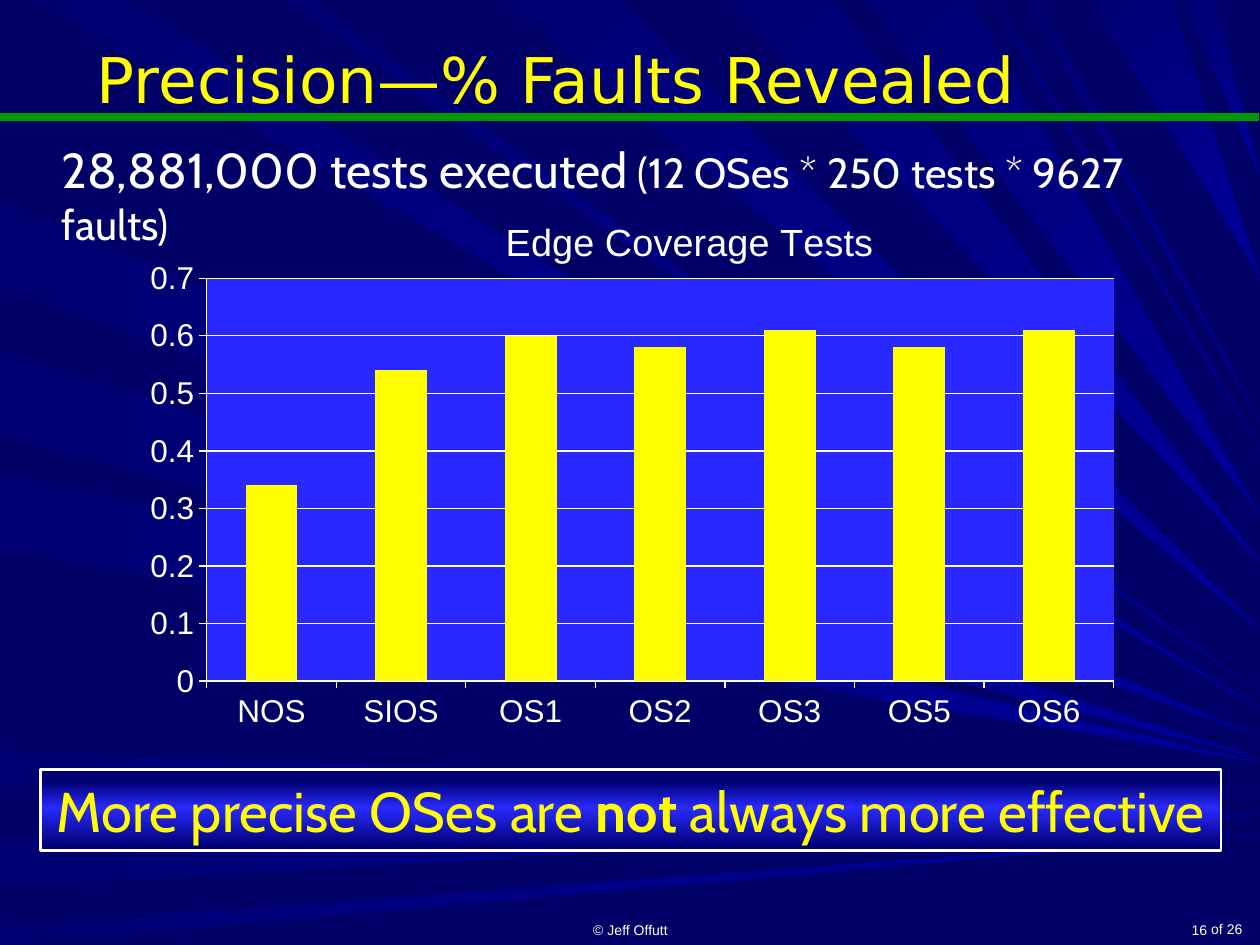
from copy import deepcopy

from lxml import etree
from pptx import Presentation
from pptx.chart.data import CategoryChartData
from pptx.dml.color import RGBColor
from pptx.enum.chart import XL_CHART_TYPE, XL_TICK_MARK
from pptx.enum.shapes import MSO_CONNECTOR, MSO_SHAPE
from pptx.enum.text import MSO_ANCHOR, MSO_AUTO_SIZE, PP_ALIGN
from pptx.oxml import parse_xml
from pptx.oxml.ns import nsdecls, qn
from pptx.util import Inches, Pt

LEFT, CENTER, RIGHT = PP_ALIGN.LEFT, PP_ALIGN.CENTER, PP_ALIGN.RIGHT
TOP, MIDDLE, BOTTOM = MSO_ANCHOR.TOP, MSO_ANCHOR.MIDDLE, MSO_ANCHOR.BOTTOM
COLUMN, OUTSIDE = XL_CHART_TYPE.COLUMN_CLUSTERED, XL_TICK_MARK.OUTSIDE
STRAIGHT, RECTANGLE, FIXED = MSO_CONNECTOR.STRAIGHT, MSO_SHAPE.RECTANGLE, MSO_AUTO_SIZE.NONE

THEME = {
    "night": "000066", "rule": "009900", "text": "FFFFFF", "accent": "FFFF00",
    "panel": "2929FF", "edge": "000073", "ray_start": "000073", "ray_end": "000099",
    "heading": "DejaVu Sans", "body": "Cabin", "plain": "Arial",
    "title": 36, "banner": 32, "lead": 28, "detail": 24,
    "chart_title": 21.6, "chart": 18, "footer": 8,
}


def paint(shape, stops, angle):
    shape.fill.gradient()
    stop_list = shape._element.spPr.find(qn("a:gradFill")).find(qn("a:gsLst"))
    while len(stop_list) < len(stops):
        stop_list.append(deepcopy(stop_list[0]))
    for stop, (percent, color) in zip(shape.fill.gradient_stops, stops):
        stop.position = percent / 100
        stop.color.rgb = RGBColor.from_string(THEME[color])
    shape.fill.gradient_angle = -angle % 360


def write(box, *spans, face="plain", color="text", align=LEFT, anchor=TOP, wrap=True):
    frame = box.text_frame
    frame.word_wrap = wrap
    frame.auto_size = FIXED
    frame.vertical_anchor = anchor
    para = frame.paragraphs[0]
    para.alignment = align
    for text, size, bold in spans:
        span = para.add_run()
        span.text = text
        span.font.size = Pt(THEME[size])
        span.font.bold = bold
        span.font.name = THEME[face]
        span.font.color.rgb = RGBColor.from_string(THEME[color])


deck = Presentation()
deck.slide_width, deck.slide_height = Inches(10), Inches(7.5)
unit = deck.slide_width // 1000
page = deck.slides.add_slide(deck.slide_layouts[5])
page.background.fill.solid()
page.background.fill.fore_color.rgb = RGBColor.from_string(THEME["night"])

left_rays = [(159, 228, 585), (278, 347, 602), (374, 437, 605),
             (596, 623, 632), (665, 704, 647), (735, 750, 662)]
top_rays = [(26, 101, 562), (225, 247, 550), (398, 492, 500), (577, 661, 446),
            (686, 770, 409), (785, 792, 357), (815, 824, 336), (865, 930, 220),
            (939, 964, 140)]
rays = [((0, near), (0, far), (1000, end), 0) for near, far, end in left_rays]
rays += [((near, 0), (far, 0), (1000, end), 45) for near, far, end in top_rays]
burst = page.shapes.add_group_shape()
for near, far, tip, angle in rays:
    builder = burst.shapes.build_freeform(*near, scale=unit)
    builder.add_line_segments([far, tip], close=True)
    ray = builder.convert_to_shape()
    ray.shadow.inherit = False
    ray.line.fill.background()
    paint(ray, [(0, "ray_start"), (100, "ray_end")], angle)

rule = page.shapes.add_connector(STRAIGHT, 0, 93 * unit, 999 * unit, 93 * unit)
rule.line.color.rgb = RGBColor.from_string(THEME["rule"])
rule.line.width = Pt(4.5)
etree.SubElement(rule._element.spPr, qn("a:effectLst"))

title = page.shapes.title
title._element.getparent().append(title._element)
title.left, title.top, title.width, title.height = 8 * unit, 0, 867 * unit, 125 * unit
write(title, ("Precision—% Faults Revealed", "title", False),
      face="heading", color="accent", align=CENTER, anchor=MIDDLE)

footers = [
    ("of 26", (950, 726, 46, 24), RIGHT, TOP),
    ("© Jeff Offutt", (342, 717, 317, 33), CENTER, BOTTOM),
    ("16", (787, 717, 181, 33), RIGHT, BOTTOM),
]
for text, area, align, anchor in footers:
    box = page.shapes.add_textbox(*[unit * length for length in area])
    write(box, (text, "footer", False), align=align, anchor=anchor)

data = CategoryChartData()
data.categories = ["NOS", "SIOS", "OS1", "OS2", "OS3", "OS5", "OS6"]
data.add_series("Series 1", [0.34, 0.54, 0.6, 0.58, 0.61, 0.58, 0.61])
chart = page.shapes.add_chart(
    COLUMN, 100 * unit, 141 * unit, 800 * unit, 444 * unit, data).chart
chart.has_legend = False
chart.font.name = THEME["plain"]
chart.font.size = Pt(THEME["chart"])
chart.font.color.rgb = RGBColor.from_string(THEME["text"])
chart.has_title = True
write(chart.chart_title, ("Edge Coverage Tests", "chart_title", False), align=CENTER)

columns = chart.plots[0]
columns.gap_width = 150
columns.vary_by_categories = False
columns.series[0].format.fill.solid()
columns.series[0].format.fill.fore_color.rgb = RGBColor.from_string(THEME["accent"])
values = chart.value_axis
values.minimum_scale, values.maximum_scale, values.major_unit = 0, 0.7, 0.1
values.has_major_gridlines = True
for axis in (chart.category_axis, values):
    axis.major_tick_mark = OUTSIDE
    axis.tick_labels.number_format = "General"
    axis.tick_labels.number_format_is_linked = False
for lines in (chart.category_axis, values, values.major_gridlines):
    lines.format.line.color.rgb = RGBColor.from_string(THEME["text"])
    lines.format.line.width = Pt(0.75)

plot_area = chart._chartSpace.chart.plotArea
plot_area.append(parse_xml(
    f'<c:spPr {nsdecls("c", "a")}><a:solidFill><a:srgbClr val="{THEME["panel"]}"/>'
    '</a:solidFill></c:spPr>'))
layouts = [
    (chart.chart_title._element, 1, {"xMode": "edge", "yMode": "edge", "x": 0.37, "y": 0.06}),
    (plot_area, 0, {"layoutTarget": "inner", "xMode": "edge", "yMode": "edge",
                    "x": 0.08, "y": 0.18, "w": 0.9, "h": 0.72}),
]
for part, position, settings in layouts:
    for old in part.findall(qn("c:layout")):
        part.remove(old)
    layout = etree.Element(qn("c:layout"))
    manual = etree.SubElement(layout, qn("c:manualLayout"))
    for name, value in settings.items():
        etree.SubElement(manual, qn(f"c:{name}")).set("val", str(value))
    part.insert(position, layout)

summary = page.shapes.add_textbox(39 * unit, 106 * unit, 920 * unit, 57 * unit)
write(summary, ("28,881,000 tests executed", "lead", False),
      (" (12 OSes * 250 tests * 9627 faults)", "detail", False), face="body")

banner = page.shapes.add_shape(RECTANGLE, 32 * unit, 611 * unit, 937 * unit, 64 * unit)
banner.shadow.inherit = False
paint(banner, [(15, "edge"), (47, "panel"), (96, "edge")], 90)
banner.line.color.rgb = RGBColor.from_string(THEME["text"])
banner.line.width = Pt(1.5)
write(banner, ("More precise OSes are ", "banner", False), ("not", "banner", True),
      (" always more effective", "banner", False),
      face="body", color="accent", align=CENTER, anchor=MIDDLE, wrap=False)

deck.save("out.pptx")
